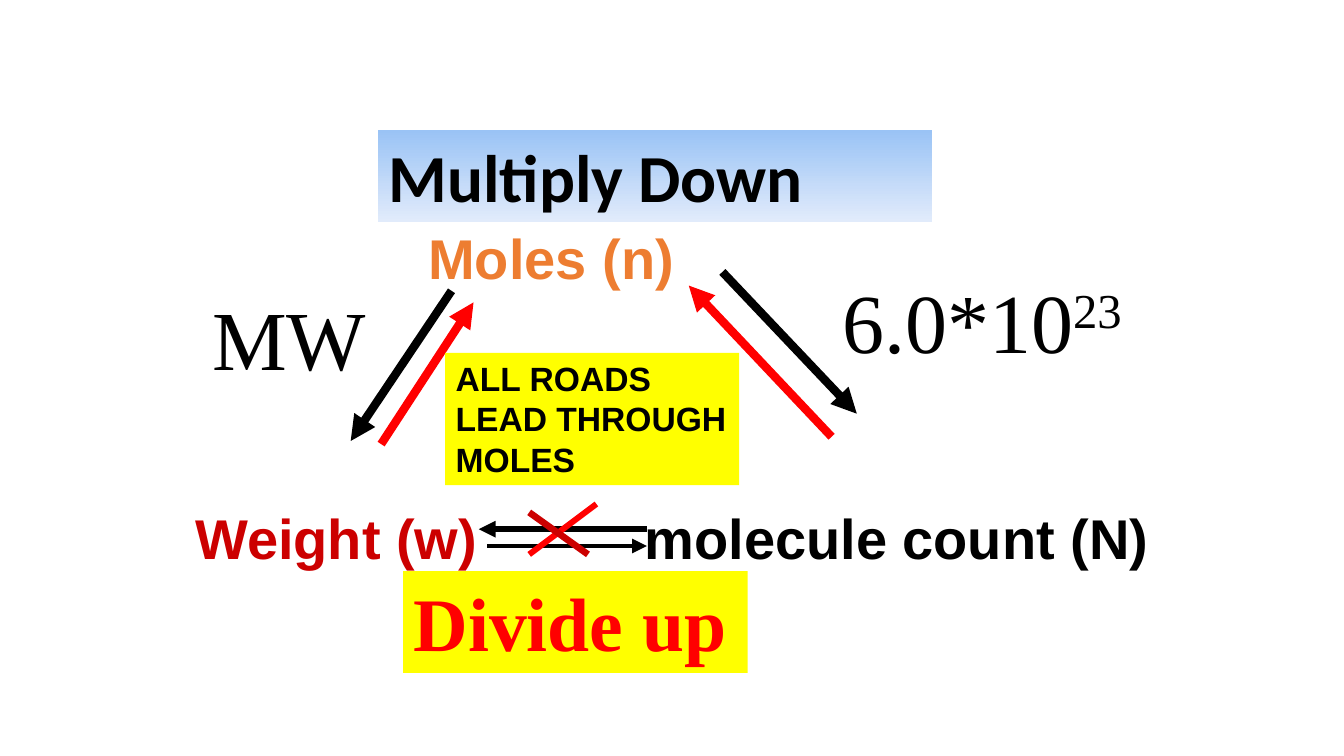
from lxml import etree
from pptx import Presentation
from pptx.dml.color import RGBColor
from pptx.enum.shapes import MSO_CONNECTOR, MSO_SHAPE
from pptx.enum.text import MSO_ANCHOR, MSO_AUTO_SIZE, PP_ALIGN
from pptx.oxml.ns import qn
from pptx.util import Pt

PX = 9525
STRAIGHT = MSO_CONNECTOR.STRAIGHT
RECTANGLE = MSO_SHAPE.RECTANGLE
TOP = MSO_ANCHOR.TOP
LEFT = PP_ALIGN.LEFT
NO_FIT = MSO_AUTO_SIZE.NONE
TITLE_ONLY = 5

COLORS = {
    "black": "000000",
    "red": "FF0000",
    "dark red": "CC0000",
    "orange": "ED7D31",
    "yellow": "FFFF00",
    "sky": "9AC3F5",
    "pale sky": "E1EBFB",
}
SANS, SERIF, HEADING = "Arial", "Times New Roman", "Calibri"


def color(name):
    return RGBColor.from_string(COLORS[name])


def px(*lengths):
    return [length * PX for length in lengths]


def format_text(shape, font, size, color_name, bold=True):
    frame = shape.text_frame
    frame.word_wrap = True
    frame.auto_size = NO_FIT
    frame.vertical_anchor = TOP
    frame.margin_left, frame.margin_right = px(10, 10)
    frame.margin_top, frame.margin_bottom = px(5, 5)
    for para in frame.paragraphs:
        para.alignment = LEFT
        para.line_spacing = 1.0
        for span in para.runs:
            span.font.name = font
            span.font.size = Pt(size)
            span.font.bold = bold
            span.font.color.rgb = color(color_name)


def add_label(page, box, text, font, size, color_name, bold=True):
    label = page.shapes.add_textbox(*px(*box))
    label.text_frame.text = text
    format_text(label, font, size, color_name, bold)
    return label


def add_note(page, box, text, font, size, color_name):
    """Add a text block on a yellow rectangle."""
    note = page.shapes.add_shape(RECTANGLE, *px(*box))
    note.shadow.inherit = False
    note.fill.solid()
    note.fill.fore_color.rgb = color("yellow")
    note.line.fill.background()
    note.text_frame.text = text
    format_text(note, font, size, color_name)


def add_line(page, start, end, color_name, width, arrow=True):
    line = page.shapes.add_connector(STRAIGHT, *px(*start, *end))
    line.line.color.rgb = color(color_name)
    line.line.width = Pt(width)
    if arrow:
        outline = line.line._get_or_add_ln()
        etree.SubElement(outline, qn("a:tailEnd"), type="triangle")
    etree.SubElement(line._element.spPr, qn("a:effectLst"))


def add_heading(page, box):
    heading = page.shapes.title
    heading.left, heading.top, heading.width, heading.height = px(*box)
    heading.fill.gradient()
    heading.fill.gradient_angle = 270
    for stop, name in zip(heading.fill.gradient_stops, ("sky", "pale sky")):
        stop.color.rgb = color(name)
    heading.text_frame.text = "Multiply Down"
    format_text(heading, HEADING, 48, "black")


def add_quantities(page, box):
    """Place the three corners of the mole triangle."""
    left, top, width, height = box
    row = 71
    bottom = top + height - row
    add_label(page, (left + 222, top, 280, row), "Moles (n)", SANS, 40, "orange")
    add_label(page, (left, bottom, 310, row), "Weight (w)", SANS, 40, "dark red")
    add_label(page, (left + 428, bottom, width - 428, row),
              "molecule count (N)", SANS, 40, "black")


def add_factors(page, box):
    """Place the conversion factors beside the slopes of the triangle."""
    left, top, width, height = box
    add_label(page, (left, top + 16, 176, height - 16), "MW", SERIF, 60, "black", False)
    number = add_label(page, (left + 600, top, width - 600, height),
                       "6.0*10", SERIF, 60, "black", False)
    exponent = number.text_frame.paragraphs[0].add_run()
    exponent.text = "23"
    format_text(number, SERIF, 60, "black", False)
    exponent.font._element.set("baseline", "30000")


def add_routes(page, box):
    """Draw the arrows along the sides and cross out the direct route."""
    left, top = box[:2]
    routes = [
        ((29, 164), (117, 29), "red", 6, True),
        ((96, 18), (0, 161), "black", 6, True),
        ((354, 0), (482, 135), "black", 6, True),
        ((458, 157), (322, 13), "red", 6, True),
        ((130, 261), (282, 261), "black", 3.5, True),
        ((282, 245), (122, 245), "black", 4, True),
        ((234, 221), (170, 269), "red", 4.25, False),
        ((170, 229), (226, 269), "dark red", 4.75, False),
    ]
    for (x1, y1), (x2, y2), *style in routes:
        add_line(page, (left + x1, top + y1), (left + x2, top + y2), *style)


def main():
    deck = Presentation()
    deck.slide_width, deck.slide_height = px(1280, 720)
    page = deck.slides.add_slide(deck.slide_layouts[TITLE_ONLY])
    add_heading(page, (360, 124, 528, 87))
    add_quantities(page, (176, 208, 944, 338))
    add_routes(page, (334, 259, 482, 269))
    add_note(page, (384, 544, 328, 97), "Divide up", SERIF, 54, "red")
    add_factors(page, (192, 252, 896, 107))
    add_note(page, (424, 336, 280, 126), "ALL ROADS LEAD THROUGH MOLES",
             SANS, 24, "black")
    deck.save("out.pptx")


if __name__ == "__main__":
    main()
